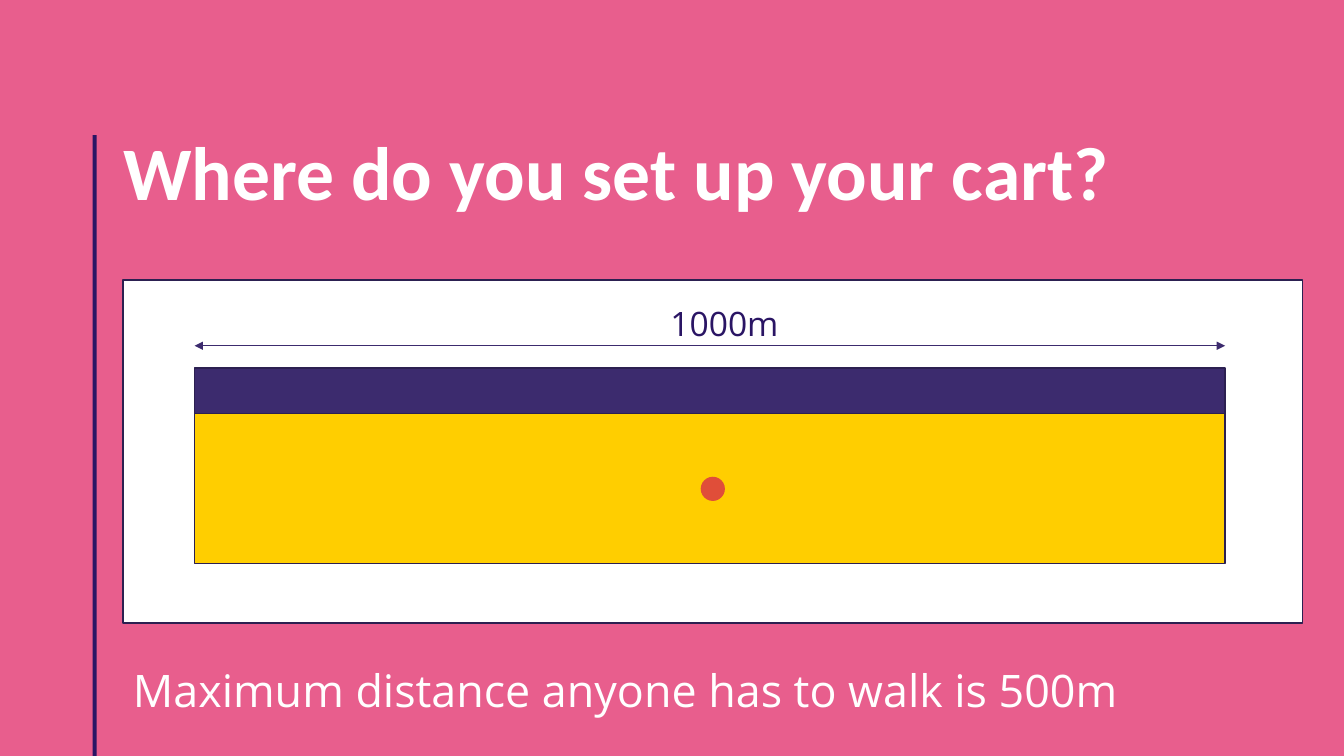
from dataclasses import dataclass

from lxml import etree
from pptx import Presentation
from pptx.dml.color import RGBColor
from pptx.enum.shapes import MSO_CONNECTOR, MSO_SHAPE
from pptx.enum.text import MSO_ANCHOR, MSO_AUTO_SIZE, PP_ALIGN
from pptx.oxml.ns import qn
from pptx.util import Inches, Pt

RECT, OVAL = MSO_SHAPE.RECTANGLE, MSO_SHAPE.OVAL
STRAIGHT = MSO_CONNECTOR.STRAIGHT
LEFT, CENTER = PP_ALIGN.LEFT, PP_ALIGN.CENTER
TOP = MSO_ANCHOR.TOP
NO_AUTOFIT = MSO_AUTO_SIZE.NONE


@dataclass(frozen=True)
class Theme:
    background: str = "E85E8D"
    white: str = "FFFFFF"
    navy: str = "2A1564"
    outline: str = "2C2051"
    sea: str = "3C2B6E"
    sand: str = "FFCE00"
    cart: str = "E04E39"
    title_font: str = "Calibri"
    body_font: str = "Open Sans"
    title_size: int = 54
    body_size: int = 32
    label_size: int = 24


class SlideBuilder:
    def __init__(self, prs, theme):
        self.theme = theme
        self.s = prs.slides.add_slide(prs.slide_layouts[5])
        fill = self.s.background.fill
        fill.solid()
        fill.fore_color.rgb = RGBColor.from_string(theme.background)

    def set_text(self, sp, text, font, size, color, bold=False,
                 align=LEFT, spacing=1.0, margin=0.0):
        """Format a text frame and put one run in it."""
        tf = sp.text_frame
        tf.word_wrap = True
        tf.auto_size = NO_AUTOFIT
        tf.vertical_anchor = TOP
        tf.margin_left = tf.margin_right = Inches(margin)
        tf.margin_top = tf.margin_bottom = Inches(margin / 2)
        p = tf.paragraphs[0]
        p.alignment = align
        p.line_spacing = spacing
        r = p.add_run()
        r.text = text
        r.font.name = font
        r.font.size = Pt(size)
        r.font.bold = bold
        r.font.color.rgb = RGBColor.from_string(color)

    def title(self, text, x, y, w, h):
        sp = self.s.shapes.title
        sp.left, sp.top, sp.width, sp.height = map(Inches, (x, y, w, h))
        t = self.theme
        self.set_text(sp, text, t.title_font, t.title_size, t.white,
                      bold=True, spacing=0.9)

    def text(self, text, x, y, w, h, size, color, **style):
        sp = self.s.shapes.add_textbox(*map(Inches, (x, y, w, h)))
        self.set_text(sp, text, self.theme.body_font, size, color, **style)

    def shape(self, kind, x, y, w, h, fill, outlined=False):
        sp = self.s.shapes.add_shape(kind, *map(Inches, (x, y, w, h)))
        sp.shadow.inherit = False
        sp.fill.solid()
        sp.fill.fore_color.rgb = RGBColor.from_string(fill)
        if outlined:
            sp.line.color.rgb = RGBColor.from_string(self.theme.outline)
            sp.line.width = Pt(1)
        else:
            sp.line.fill.background()

    def dimension(self, x1, x2, y):
        """Draw a horizontal line with an arrowhead at each end."""
        line = self.s.shapes.add_connector(
            STRAIGHT, *map(Inches, (x1, y, x2, y)))
        line.line.color.rgb = RGBColor.from_string(self.theme.sea)
        line.line.width = Pt(0.5)
        sp_pr = line._element.spPr
        ln = sp_pr.find(qn("a:ln"))
        for end in ("a:headEnd", "a:tailEnd"):
            etree.SubElement(ln, qn(end), type="triangle")
        etree.SubElement(sp_pr, qn("a:effectLst"))


def main():
    prs = Presentation()
    prs.slide_width, prs.slide_height = Inches(13.33), Inches(7.5)
    theme = Theme()
    slide = SlideBuilder(prs, theme)

    margin, top = 1.22, 1.34
    beach_x, beach_w = 1.93, 10.22

    slide.shape(RECT, 0.92, top, 0.04, 7.5 - top, theme.navy)
    slide.title("Where do you set up your cart?", margin, top, 11.5, 1.28)

    slide.shape(RECT, margin, 2.78, 11.7, 3.4, theme.white, outlined=True)
    slide.shape(RECT, beach_x, 3.65, beach_w, 1.84, theme.sea, outlined=True)
    slide.shape(RECT, beach_x, 4.1, beach_w, 1.49, theme.sand, outlined=True)
    slide.dimension(beach_x, beach_x + beach_w, 3.43)
    slide.text("1000m", 5.59, 3.05, 3.19, 0.58, theme.label_size, theme.navy,
               align=CENTER, spacing=0.9)
    slide.text("Maximum distance anyone has to walk is 500m",
               margin, 6.53, 10.65, 0.7, theme.body_size, theme.white,
               margin=0.1)
    slide.shape(OVAL, 6.95, 4.73, 0.24, 0.24, theme.cart)

    prs.save("out.pptx")


if __name__ == "__main__":
    main()
